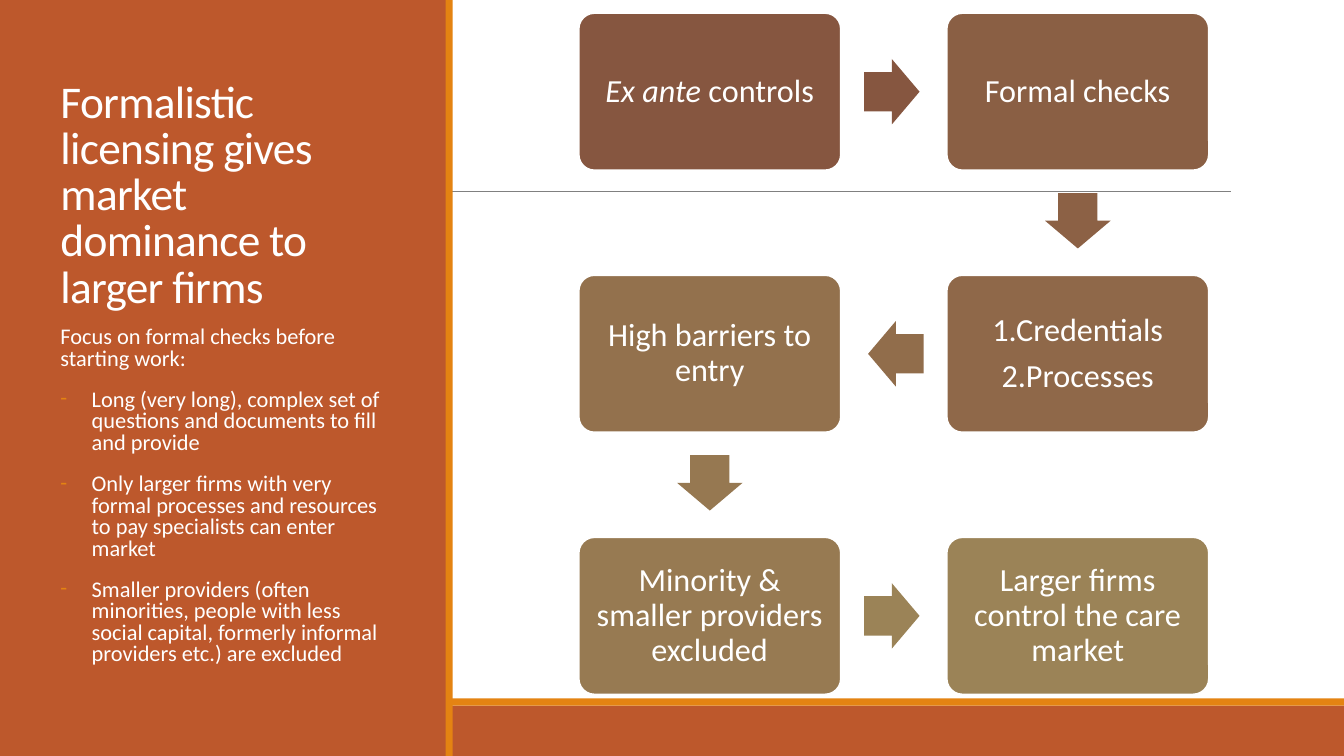
from dataclasses import dataclass

from lxml import etree
from pptx import Presentation
from pptx.dml.color import RGBColor
from pptx.enum.shapes import MSO_CONNECTOR, MSO_SHAPE
from pptx.enum.text import MSO_ANCHOR, MSO_AUTO_SIZE, PP_ALIGN
from pptx.oxml.ns import qn
from pptx.util import Inches, Pt

RECTANGLE, ROUNDED, ARROW = MSO_SHAPE.RECTANGLE, MSO_SHAPE.ROUNDED_RECTANGLE, MSO_SHAPE.RIGHT_ARROW
STRAIGHT = MSO_CONNECTOR.STRAIGHT
TOP, MIDDLE, BOTTOM = MSO_ANCHOR.TOP, MSO_ANCHOR.MIDDLE, MSO_ANCHOR.BOTTOM
LEFT, CENTER = PP_ALIGN.LEFT, PP_ALIGN.CENTER
NO_AUTOFIT = MSO_AUTO_SIZE.NONE


@dataclass(frozen=True)
class Theme:
    font: str = "Calibri"
    rust: str = "BD582C"
    orange: str = "E48312"
    rule: str = "808080"
    white: str = "FFFFFF"
    title_size: float = 32.4
    body_size: float = 16
    node_size: float = 23


@dataclass(frozen=True)
class Box:
    left: float
    top: float
    width: float
    height: float

    def emu(self):
        return [Inches(n) for n in (self.left, self.top, self.width, self.height)]


THEME = Theme()
PAGE = Box(0, 0, 13.33, 7.5)
SIDEBAR = Box(0, 0, 4.43, 7.5)
FOOTER = Box(0, 7, 13.33, 0.5)
FLOW = Box(5.74, 0.13, 6.25, 6.76)
STRIPE = 0.07

TITLE = "Formalistic licensing gives market dominance to larger firms"
LEAD = "Focus on formal checks before starting work:"
POINTS = [
    "Long (very long), complex set of questions and documents to fill and provide",
    "Only larger firms with very formal processes and resources to pay specialists can enter market",
    "Smaller providers (often minorities, people with less social capital, formerly informal providers etc.) are excluded",
]
STEPS = [
    (0, 0, "865640", [[("Ex ante ", True), ("controls", False)]]),
    (1, 0, "8A5F44", [[("Formal checks", False)]]),
    (1, 1, "8F6849", [[("1.Credentials", False)], [("2.Processes", False)]]),
    (0, 1, "93714D", [[("High barriers to entry", False)]]),
    (0, 2, "977A52", [[("Minority & smaller providers excluded", False)]]),
    (1, 2, "9B8357", [[("Larger firms control the care market", False)]]),
]
ARROW_COLOURS = ["865640", "8C6145", "916D4B", "967851", "9B8357"]


def add_filled(slide, preset, box, colour):
    shape = slide.shapes.add_shape(preset, *box.emu())
    shape.shadow.inherit = False
    shape.fill.solid()
    shape.fill.fore_color.rgb = RGBColor.from_string(colour)
    shape.line.fill.background()
    return shape


def format_paragraph(paragraph, size, align, line_spacing, before=0, after=0):
    paragraph.alignment = align
    paragraph.line_spacing = line_spacing
    paragraph.space_before, paragraph.space_after = Pt(before), Pt(after)
    paragraph.font.name = THEME.font
    paragraph.font.size = Pt(size)
    paragraph.font.color.rgb = RGBColor.from_string(THEME.white)


def set_bullet(paragraph, dash):
    properties = paragraph._p.get_or_add_pPr()
    indent = Inches(0.31) if dash else 0
    properties.set("marL", str(indent))
    properties.set("indent", str(-indent))
    if dash:
        tint = etree.SubElement(properties, qn("a:buClr"))
        etree.SubElement(tint, qn("a:srgbClr"), val=THEME.orange)
        etree.SubElement(properties, qn("a:buFont"), typeface=THEME.font)
        etree.SubElement(properties, qn("a:buChar"), char="-")
    else:
        etree.SubElement(properties, qn("a:buNone"))


def place_placeholder(placeholder, box, anchor):
    placeholder.left, placeholder.top, placeholder.width, placeholder.height = box.emu()
    placeholder.element.getparent().append(placeholder.element)
    frame = placeholder.text_frame
    frame.auto_size = NO_AUTOFIT
    frame.word_wrap = True
    frame.vertical_anchor = anchor
    return frame


def build_footer(slide, box):
    add_filled(slide, RECTANGLE, box, THEME.rust)
    add_filled(slide, RECTANGLE, Box(box.left, box.top - STRIPE, box.width, STRIPE), THEME.orange)


def build_rule(slide, box):
    height = Inches(box.top + 1.9)
    rule = slide.shapes.add_connector(STRAIGHT, Inches(box.left + 1.31), height, Inches(box.left + 12.21), height)
    rule.line.color.rgb = RGBColor.from_string(THEME.rule)
    rule.line.width = Pt(0.5)
    etree.SubElement(rule._element.spPr, qn("a:effectLst"))


def build_sidebar(slide, box):
    add_filled(slide, RECTANGLE, box, THEME.rust)
    add_filled(slide, RECTANGLE, Box(box.left + box.width - 0.01, box.top, STRIPE, box.height), THEME.orange)

    margin, column = box.left + 0.5, box.width - 0.93
    heading = place_placeholder(slide.shapes.title, Box(margin, box.top + 0.65, column, 2.5), BOTTOM)
    heading.text = TITLE
    format_paragraph(heading.paragraphs[0], THEME.title_size, LEFT, 0.85)
    heading.paragraphs[0].runs[0]._r.get_or_add_rPr().set("spc", "-50")

    body = place_placeholder(slide.placeholders[1], Box(margin, box.top + 3.2, column, 3.7), TOP)
    body.text = "\n".join([LEAD, *POINTS])
    for index, paragraph in enumerate(body.paragraphs):
        set_bullet(paragraph, dash=index > 0)
        format_paragraph(paragraph, THEME.body_size, LEFT, 0.8, before=12, after=2)


def add_step(slide, box, colour, lines):
    step = add_filled(slide, ROUNDED, box, colour)
    step.adjustments[0] = 0.1
    step.line.color.rgb = RGBColor.from_string(THEME.white)
    step.line.width = Pt(1.25)
    frame = step.text_frame
    frame.word_wrap = True
    frame.vertical_anchor = MIDDLE
    frame.margin_left = frame.margin_right = frame.margin_top = frame.margin_bottom = Inches(0.1)
    for index, line in enumerate(lines):
        paragraph = frame.add_paragraph() if index else frame.paragraphs[0]
        for text, italic in line:
            run = paragraph.add_run()
            run.text = text
            if italic:
                run.font.italic = True
        format_paragraph(paragraph, THEME.node_size, CENTER, 0.9, after=8)


def build_flow(slide, box):
    step_width, step_height = 2.6, 1.56
    column_pitch = box.width - step_width
    row_pitch = (box.height - step_height) / 2
    arrow_length, arrow_breadth, setback = 0.55, 0.65, 0.02
    angles = {(1, 0): 0, (0, 1): 90, (-1, 0): 180}

    for column, row, colour, lines in STEPS:
        cell = Box(box.left + column * column_pitch, box.top + row * row_pitch, step_width, step_height)
        add_step(slide, cell, colour, lines)

    for start, end, colour in zip(STEPS, STEPS[1:], ARROW_COLOURS):
        across, down = end[0] - start[0], end[1] - start[1]
        center_x = box.left + step_width / 2 + (start[0] + end[0]) / 2 * column_pitch - setback * across
        center_y = box.top + step_height / 2 + (start[1] + end[1]) / 2 * row_pitch - setback * down
        place = Box(center_x - arrow_length / 2, center_y - arrow_breadth / 2, arrow_length, arrow_breadth)
        arrow = add_filled(slide, ARROW, place, colour)
        arrow.adjustments[0], arrow.adjustments[1] = 0.6, 0.5
        arrow.rotation = angles[across, down]


def main():
    presentation = Presentation()
    presentation.slide_width, presentation.slide_height = Inches(PAGE.width), Inches(PAGE.height)
    slide = presentation.slides.add_slide(presentation.slide_layouts[1])
    build_footer(slide, FOOTER)
    build_rule(slide, PAGE)
    build_sidebar(slide, SIDEBAR)
    build_flow(slide, FLOW)
    presentation.save("out.pptx")


if __name__ == "__main__":
    main()
